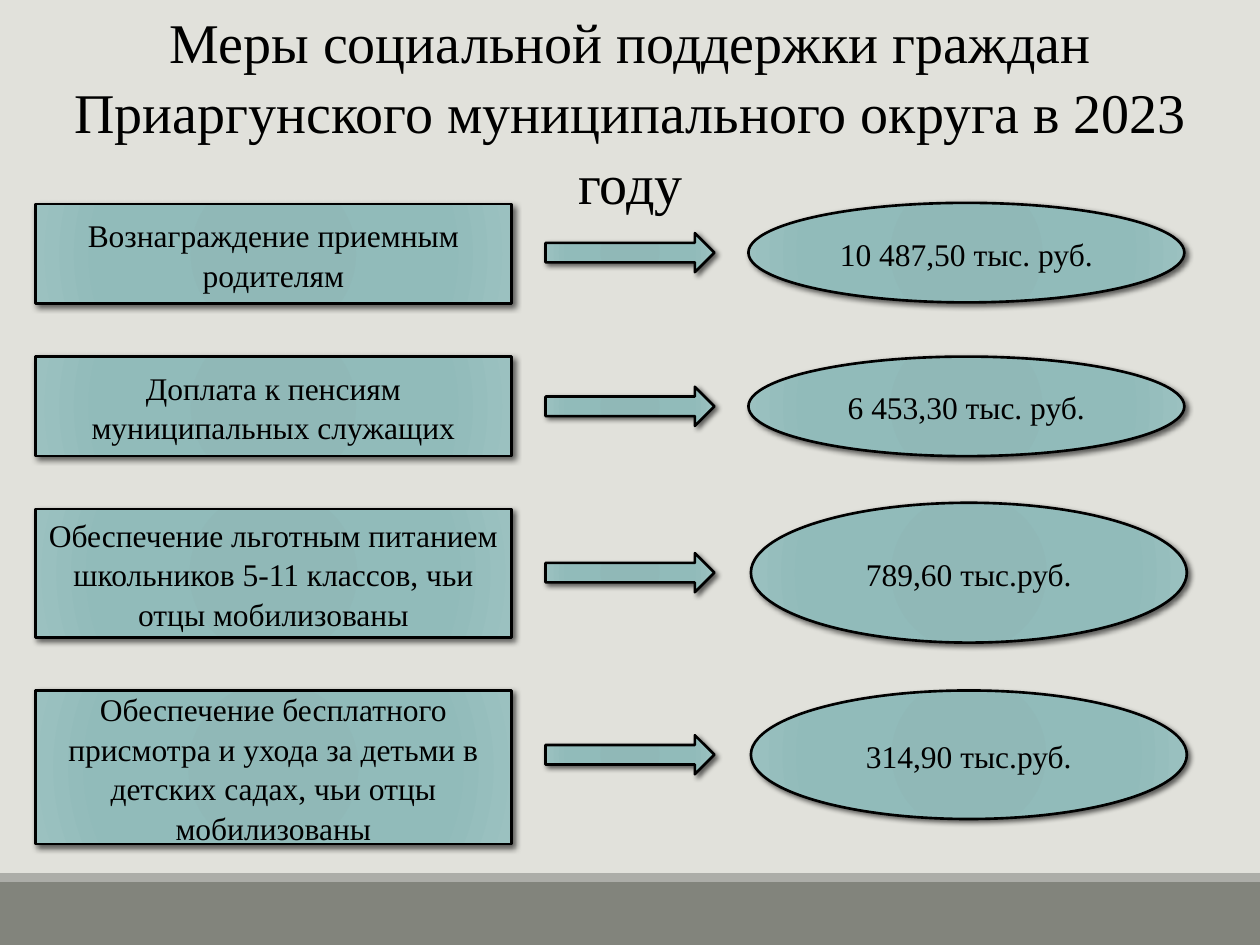
from dataclasses import dataclass

from pptx import Presentation
from pptx.dml.color import RGBColor
from pptx.enum.shapes import MSO_SHAPE
from pptx.enum.text import MSO_ANCHOR, PP_ALIGN
from pptx.oxml import parse_xml
from pptx.oxml.ns import nsdecls, qn
from pptx.util import Inches, Pt

RECT = MSO_SHAPE.RECTANGLE
OVAL = MSO_SHAPE.OVAL
ARROW = MSO_SHAPE.RIGHT_ARROW
CENTER = PP_ALIGN.CENTER
MIDDLE = MSO_ANCHOR.MIDDLE
TITLE_ONLY = 5


@dataclass(frozen=True)
class Theme:
    font: str = "Times New Roman"
    title_size: float = 32
    body_size: float = 18
    line_spacing: float = 1.05
    background: str = "E1E1DB"
    ink: str = "000000"
    band: str = "82847C"
    band_edge: str = "ACADA8"
    outline: float = 1.5
    gradient: tuple = ((0, "8EB7B6"), (34, "90B8B7"), (70, "91BBBA"), (100, "9BC1C0"))


THEME = Theme()

TITLE = "Меры социальной поддержки граждан Приаргунского муниципального округа в 2023 году"

BOX_LEFT, BOX_WIDTH = 0.28, 3.78
ARROW_LEFT, ARROW_WIDTH, ARROW_HEIGHT = 4.33, 1.34, 0.31
OVAL_WIDTH = 3.46

# measure, box (top, height), amount, oval (left, top, height)
MEASURES = [
    ("Вознаграждение приемным родителям", (1.62, 0.79),
     "10 487,50 тыс. руб.", (5.94, 1.61, 0.79)),
    ("Доплата к пенсиям муниципальных служащих", (2.83, 0.79),
     "6 453,30 тыс. руб.", (5.94, 2.83, 0.79)),
    ("Обеспечение льготным питанием школьников 5-11 классов, чьи отцы мобилизованы",
     (4.04, 1.02), "789,60 тыс.руб.", (5.96, 3.99, 1.11)),
    ("Обеспечение бесплатного присмотра и ухода за детьми в детских садах, чьи отцы мобилизованы",
     (5.48, 1.22), "314,90 тыс.руб.", (5.96, 5.48, 1.02)),
]


def rgb(value):
    return RGBColor.from_string(value)


def set_text(sp, text, size):
    tf = sp.text_frame
    tf.word_wrap = True
    tf.vertical_anchor = MIDDLE
    p = tf.paragraphs[0]
    p.alignment = CENTER
    p.line_spacing = THEME.line_spacing
    r = p.add_run()
    r.text = text
    for name, value in {"name": THEME.font, "size": Pt(size), "bold": False}.items():
        setattr(r.font, name, value)
    r.font.color.rgb = rgb(THEME.ink)


def set_radial_fill(sp):
    sp.fill.gradient()
    stops = "".join(
        f'<a:gs pos="{pos * 1000}"><a:srgbClr val="{color}"/></a:gs>'
        for pos, color in THEME.gradient)
    fill = parse_xml(
        f'<a:gradFill {nsdecls("a")} rotWithShape="1"><a:gsLst>{stops}</a:gsLst>'
        '<a:path path="circle">'
        '<a:fillToRect l="100000" t="100000" r="100000" b="100000"/>'
        '</a:path></a:gradFill>')
    props = sp.element.spPr
    props.replace(props.find(qn("a:gradFill")), fill)


def set_shadow(sp, blur):
    sp.shadow.inherit = False
    sp.element.spPr.find(qn("a:effectLst")).append(parse_xml(
        f'<a:outerShdw {nsdecls("a")} blurRad="{Pt(blur)}" dist="{Pt(2)}" '
        'dir="2700000" algn="tl" rotWithShape="0">'
        f'<a:srgbClr val="{THEME.ink}"><a:alpha val="60000"/></a:srgbClr>'
        '</a:outerShdw>'))


def add_title(s):
    title = s.shapes.title
    bounds = {"left": 0.16, "top": 0.01, "width": 9.69, "height": 1.72}
    for name, value in bounds.items():
        setattr(title, name, Inches(value))
    set_text(title, TITLE, THEME.title_size)


def add_band(s, top, height, color):
    sp = s.shapes.add_shape(RECT, 0, Inches(top), Inches(10), Inches(height))
    sp.fill.solid()
    sp.fill.fore_color.rgb = rgb(color)
    sp.line.fill.background()
    sp.shadow.inherit = False


def add_block(s, kind, bounds, text=None, blur=3):
    """Add a gradient shape with a black outline, a shadow and optional text."""
    sp = s.shapes.add_shape(kind, *map(Inches, bounds))
    set_radial_fill(sp)
    sp.line.color.rgb = rgb(THEME.ink)
    sp.line.width = Pt(THEME.outline)
    set_shadow(sp, blur)
    if text:
        set_text(sp, text, THEME.body_size)


def add_measure(s, measure, box, amount, oval):
    box_top, box_height = box
    oval_left, oval_top, oval_height = oval
    arrow_top = oval_top + (oval_height - ARROW_HEIGHT) / 2
    add_block(s, RECT, (BOX_LEFT, box_top, BOX_WIDTH, box_height), measure, blur=3.5)
    add_block(s, OVAL, (oval_left, oval_top, OVAL_WIDTH, oval_height), amount)
    add_block(s, ARROW, (ARROW_LEFT, arrow_top, ARROW_WIDTH, ARROW_HEIGHT))


def main():
    prs = Presentation()
    prs.slide_width, prs.slide_height = Inches(10), Inches(7.5)
    s = prs.slides.add_slide(prs.slide_layouts[TITLE_ONLY])
    s.background.fill.solid()
    s.background.fill.fore_color.rgb = rgb(THEME.background)
    add_band(s, 7, 0.5, THEME.band)
    add_band(s, 6.93, 0.07, THEME.band_edge)
    add_title(s)
    for row in MEASURES:
        add_measure(s, *row)
    prs.save("out.pptx")


if __name__ == "__main__":
    main()
